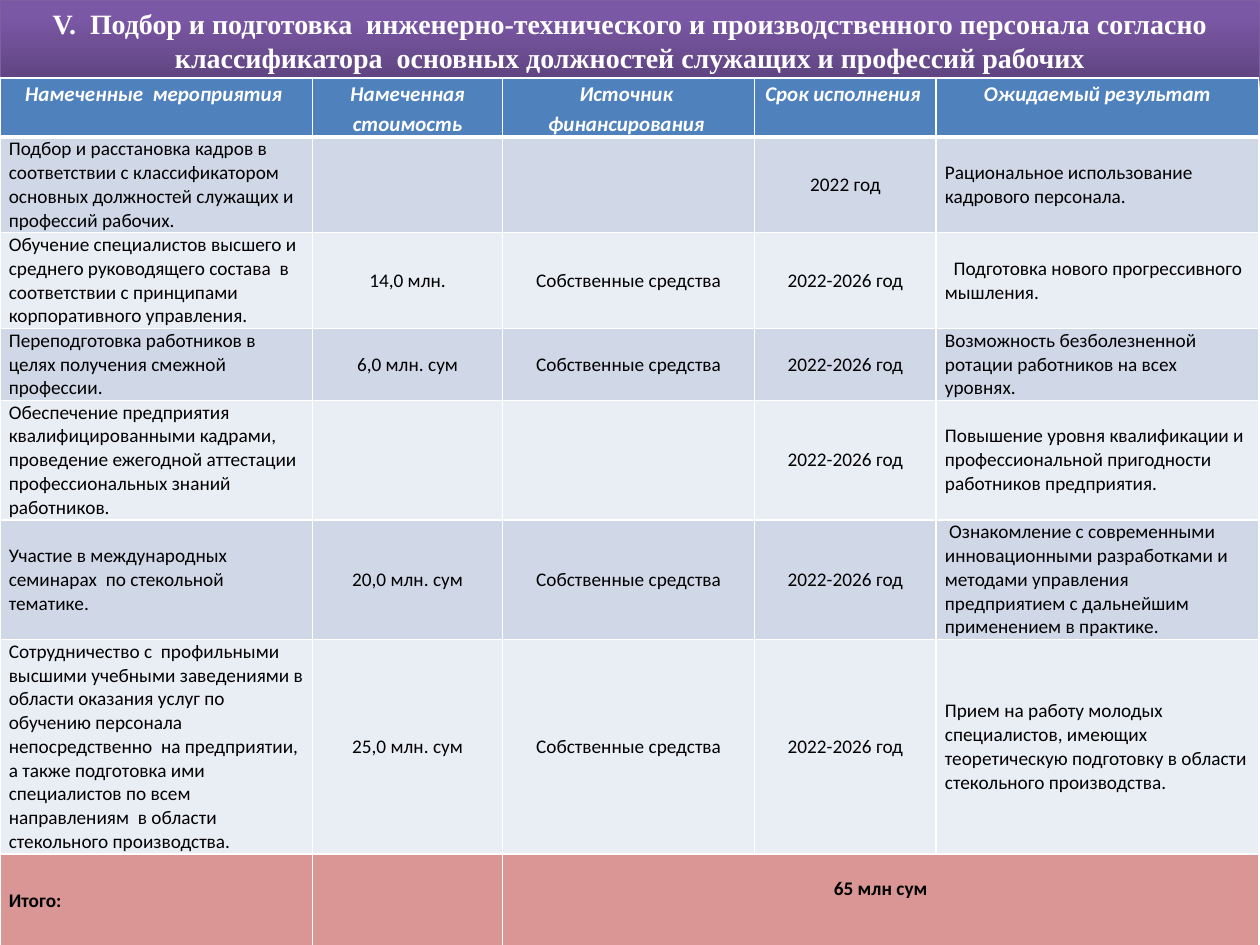
from copy import deepcopy
from dataclasses import dataclass

from lxml.etree import SubElement
from pptx import Presentation
from pptx.dml.color import RGBColor
from pptx.enum.shapes import MSO_SHAPE as Shape
from pptx.enum.text import MSO_ANCHOR as Anchor, PP_ALIGN as Align
from pptx.oxml import parse_xml
from pptx.oxml.ns import nsdecls, qn
from pptx.util import Inches, Pt


@dataclass(frozen=True)
class Theme:
    """Colours, fonts and type sizes of the slide."""
    white: str = "FFFFFF"
    black: str = "000000"
    header: str = "4F81BD"
    bands: tuple = ("D0D8E8", "E9EDF4")
    total: str = "D99694"
    banner_line: str = "7D60A0"
    banner_stops: tuple = ((0, "5F4480"), (0.8, "7B58A6"), (1, "7C57A8"))
    title_font: str = "Times New Roman"
    body_font: str = "Calibri"
    title_size: int = 16
    header_size: int = 12
    body_size: int = 11


THEME = Theme()
TITLE = (
    "V.  Подбор и подготовка  инженерно-технического и производственного персонала "
    "согласно классификатора  основных должностей служащих и профессий рабочих"
)
COLUMN_WIDTHS = (2.48, 1.51, 2, 1.44, 2.56)
ROW_HEIGHTS = (0.46, 0.76, 0.76, 0.57, 0.95, 0.95, 1.7, 0.74)
COLUMN_ALIGNS = (Align.LEFT, Align.CENTER, Align.CENTER, Align.CENTER, Align.LEFT)
HEADINGS = (
    "Намеченные  мероприятия ", "Намеченная\nстоимость",
    "Источник  финансирования ", "Срок исполнения ", "Ожидаемый результат",
)
OWN_FUNDS = "Собственные средства"
PERIOD = "2022-2026 год"
MEASURES = (
    ("Подбор и расстановка кадров в соответствии с классификатором основных "
     "должностей служащих и профессий рабочих.",
     "", "", "2022 год", "Рациональное использование кадрового персонала."),
    ("Обучение специалистов высшего и среднего руководящего состава  в соответствии "
     "с принципами корпоративного управления.",
     "14,0 млн.", OWN_FUNDS, PERIOD, "  Подготовка нового прогрессивного мышления."),
    ("Переподготовка работников в целях получения смежной профессии.",
     "6,0 млн. сум", OWN_FUNDS, PERIOD,
     "Возможность безболезненной ротации работников на всех уровнях."),
    ("Обеспечение предприятия квалифицированными кадрами, проведение ежегодной "
     "аттестации  профессиональных знаний работников.",
     "", "", PERIOD,
     "Повышение уровня квалификации и профессиональной пригодности работников предприятия."),
    ("Участие в международных семинарах  по стекольной тематике.",
     "20,0 млн. сум", OWN_FUNDS, PERIOD,
     " Ознакомление с современными инновационными разработками и методами управления "
     "предприятием с дальнейшим  применением в практике."),
    ("Сотрудничество с  профильными высшими учебными заведениями в области оказания "
     "услуг по обучению персонала непосредственно  на предприятии, а также подготовка "
     "ими специалистов по всем  направлениям  в области стекольного производства.",
     "25,0 млн. сум", OWN_FUNDS, PERIOD,
     "Прием на работу молодых специалистов, имеющих теоретическую подготовку в области "
     "стекольного производства."),
)
TOTALS = ("Итого:", "", "65 млн сум", "", "")


def write_text(frame, text, *, size, color, font=THEME.body_font, align=Align.LEFT,
               bold=False, italic=False, spacing=None):
    """Write one paragraph per line of text in the given format."""
    frame.word_wrap = True
    for index, line in enumerate(text.split("\n")):
        paragraph = frame.add_paragraph() if index else frame.paragraphs[0]
        paragraph.alignment = align
        paragraph.line_spacing = spacing
        run = paragraph.add_run()
        run.text = line
        run.font.name = font
        run.font.size = Pt(size)
        run.font.bold = bold
        run.font.italic = italic
        run.font.color.rgb = RGBColor.from_string(color)


def fill_gradient(shape, stops):
    """Fill a shape with a gradient that rises from the bottom edge."""
    shape.fill.gradient()
    shape.fill.gradient_angle = 90
    stop_list = next(shape._element.spPr.iter(qn("a:gsLst")))
    while len(stop_list) < len(stops):
        stop_list.append(deepcopy(stop_list[-1]))
    for stop, (position, color) in zip(shape.fill.gradient_stops, stops):
        stop.position = position
        stop.color.rgb = RGBColor.from_string(color)


def cast_shadow(shape, color):
    """Give a shape a soft shadow below it."""
    shape.shadow.inherit = False
    effects = shape._element.spPr.find(qn("a:effectLst"))
    shadow = SubElement(effects, qn("a:outerShdw"), blurRad=str(Pt(3.1)),
                        dist=str(Pt(1.8)), dir="5400000", rotWithShape="0")
    tint = SubElement(shadow, qn("a:srgbClr"), val=color)
    SubElement(tint, qn("a:alpha"), val="35000")


def add_banner(slide):
    """Add the title banner across the top."""
    banner = slide.shapes.add_shape(Shape.RECTANGLE, 0, 0, Inches(10), Inches(0.64))
    fill_gradient(banner, THEME.banner_stops)
    banner.line.color.rgb = RGBColor.from_string(THEME.banner_line)
    banner.line.width = Pt(0.75)
    cast_shadow(banner, THEME.black)
    banner.text_frame.vertical_anchor = Anchor.MIDDLE
    write_text(banner.text_frame, TITLE, size=THEME.title_size, color=THEME.white,
               font=THEME.title_font, align=Align.CENTER, bold=True)


def set_borders(cell, top, bottom):
    """Draw white borders round a cell, one point wide at the sides."""
    properties = cell._tc.get_or_add_tcPr()
    for index, (side, width) in enumerate(zip("LRTB", (1, 1, top, bottom))):
        properties.insert(index, parse_xml(
            f'<a:ln{side} {nsdecls("a")} w="{Pt(width)}"><a:solidFill>'
            f'<a:srgbClr val="{THEME.white}"/></a:solidFill></a:ln{side}>'))


def fill_row(table, row, texts, aligns, fill, anchor=Anchor.MIDDLE, **text_format):
    """Fill one table row with texts, colour and borders."""
    for column, (text, align) in enumerate(zip(texts, aligns)):
        cell = table.cell(row, column)
        cell.fill.solid()
        cell.fill.fore_color.rgb = RGBColor.from_string(fill)
        cell.vertical_anchor = anchor
        cell.margin_left = cell.margin_right = Inches(0.07)
        cell.margin_top = cell.margin_bottom = 0
        set_borders(cell, 3 if row == 1 else 1, 3 if row == 0 else 1)
        if text:
            write_text(cell.text_frame, text, align=align, **text_format)


def add_plan(slide):
    """Add the table of staff training measures."""
    table = slide.shapes.add_table(
        len(ROW_HEIGHTS), len(COLUMN_WIDTHS), 0, Inches(0.62),
        Inches(sum(COLUMN_WIDTHS)), Inches(sum(ROW_HEIGHTS))).table
    table.horz_banding = False
    for column, width in zip(table.columns, COLUMN_WIDTHS):
        column.width = Inches(width)
    for row, height in zip(table.rows, ROW_HEIGHTS):
        row.height = Inches(height)

    fill_row(table, 0, HEADINGS, [Align.CENTER] * len(HEADINGS), THEME.header,
             Anchor.TOP, size=THEME.header_size, color=THEME.white, bold=True,
             italic=True, spacing=1.15)
    body = {"size": THEME.body_size, "color": THEME.black}
    for row, measure in enumerate(MEASURES, start=1):
        fill_row(table, row, measure, COLUMN_ALIGNS, THEME.bands[(row - 1) % 2],
                 bold=False, **body)
    last = len(ROW_HEIGHTS) - 1
    fill_row(table, last, TOTALS, COLUMN_ALIGNS, THEME.total, bold=True, **body)
    total = table.cell(last, 2)
    total.merge(table.cell(last, 4))
    total.margin_bottom = Inches(0.19)


def main():
    """Build the slide and save it."""
    deck = Presentation()
    deck.slide_width, deck.slide_height = Inches(10), Inches(7.5)
    slide = deck.slides.add_slide(deck.slide_layouts[6])
    add_banner(slide)
    add_plan(slide)
    deck.save("out.pptx")


if __name__ == "__main__":
    main()
